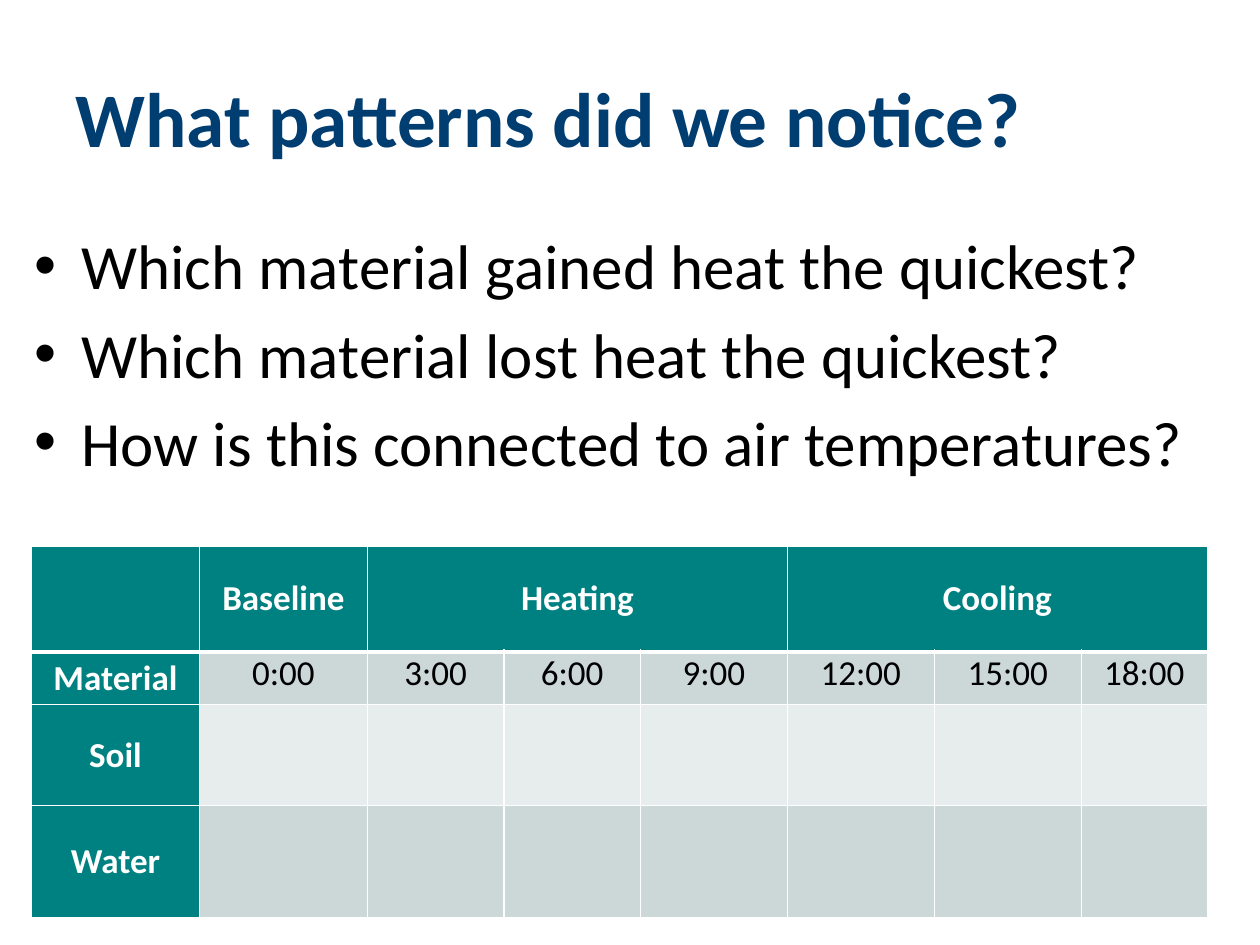
from lxml import etree
from pptx import Presentation
from pptx.dml.color import RGBColor
from pptx.enum.text import MSO_ANCHOR, MSO_AUTO_SIZE, PP_ALIGN
from pptx.oxml.ns import qn
from pptx.util import Inches, Pt

LEFT, CENTER = PP_ALIGN.LEFT, PP_ALIGN.CENTER
TOP, MIDDLE = MSO_ANCHOR.TOP, MSO_ANCHOR.MIDDLE
FIXED = MSO_AUTO_SIZE.NONE

THEME = {
    "font": "Calibri",
    "navy": "003D71", "black": "000000", "white": "FFFFFF",
    "teal": "008181", "dark": "CCD8D8", "light": "E7EDED",
    "title": 44.1, "body": 36, "cell": 20,
}


def add_run(para, text, size, color, bold=False):
    run = para.add_run()
    run.text = text
    font = run.font
    font.name = THEME["font"]
    font.size = Pt(THEME[size])
    font.bold = bold
    font.color.rgb = RGBColor.from_string(THEME[color])


def add_edge(cell, side, width):
    edge = etree.SubElement(cell._tc.get_or_add_tcPr(), qn("a:" + side), w=str(Pt(width)))
    fill = etree.SubElement(edge, qn("a:solidFill"))
    etree.SubElement(fill, qn("a:srgbClr"), val=THEME["white"])


prs = Presentation()
prs.slide_width, prs.slide_height = Inches(10), Inches(7.5)
slide = prs.slides.add_slide(prs.slide_layouts[1])

title = slide.shapes.title
title.left, title.top = Inches(0.5), Inches(0.3)
title.width, title.height = Inches(9), Inches(1.25)
frame = title.text_frame
frame.auto_size = FIXED
frame.vertical_anchor = MIDDLE
para = frame.paragraphs[0]
para.alignment = LEFT
add_run(para, "What patterns did we notice?", "title", "navy", True)

body = slide.placeholders[1]
body.left, body.top = Inches(0.17), Inches(1.75)
body.width, body.height = Inches(9.67), Inches(2.33)
frame = body.text_frame
frame.auto_size = FIXED
asks = [
    "Which material gained heat the quickest?",
    "Which material lost heat the quickest?",
    "How is this connected to air temperatures?",
]
for i, ask in enumerate(asks):
    para = frame.add_paragraph() if i else frame.paragraphs[0]
    para.space_before = Pt(7.2 if i else 0)
    add_run(para, ask, "body", "black")

UNIT = Inches(1) // 12
cols = [16, 16, 13, 13, 14, 14, 14, 12]
rows = [0.84, 0.42, 0.8, 0.89]
data = [
    ["", "Baseline", "Heating", "", "", "Cooling", "", ""],
    ["Material", "0:00", "3:00", "6:00", "9:00", "12:00", "15:00", "18:00"],
    ["Soil"] + [""] * 7,
    ["Water"] + [""] * 7,
]
table = slide.shapes.add_table(
    len(rows), len(cols), 3 * UNIT, 52 * UNIT, sum(cols) * UNIT, Inches(sum(rows))
).table
for col, units in zip(table.columns, cols):
    col.width = units * UNIT
for row, high in zip(table.rows, rows):
    row.height = Inches(high)
for start in (2, 5):
    table.cell(0, start).merge(table.cell(0, start + 2))

for r, line in enumerate(data):
    for c, text in enumerate(line):
        cell = table.cell(r, c)
        head = r == 0 or c == 0
        for side in ("lnL", "lnR", "lnT", "lnB"):
            thick = (r, side) in ((0, "lnB"), (1, "lnT"))
            add_edge(cell, side, 3 if thick else 1)
        cell.fill.solid()
        shade = "teal" if head else "light" if r == 2 else "dark"
        cell.fill.fore_color.rgb = RGBColor.from_string(THEME[shade])
        cell.margin_left = cell.margin_right = Inches(0.07)
        cell.margin_top = cell.margin_bottom = 0
        cell.vertical_anchor = MIDDLE if head else TOP
        if text:
            para = cell.text_frame.paragraphs[0]
            para.alignment = CENTER
            add_run(para, text, "cell", "white" if head else "black", head)

prs.save("out.pptx")
